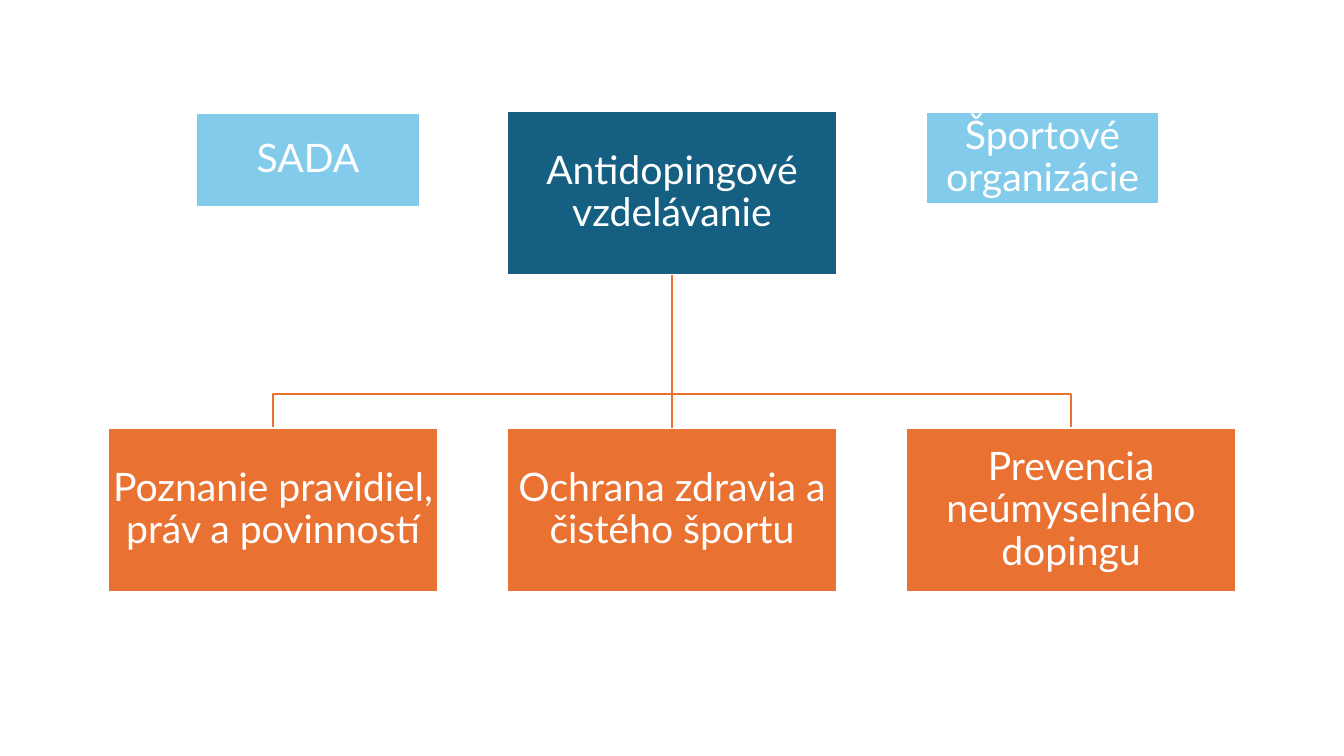
from dataclasses import dataclass

from lxml.etree import SubElement
from pptx import Presentation
from pptx.dml.color import RGBColor
from pptx.enum.shapes import MSO_CONNECTOR, MSO_SHAPE
from pptx.enum.text import MSO_ANCHOR, PP_ALIGN
from pptx.oxml.ns import qn
from pptx.shapes.autoshape import Shape
from pptx.shapes.shapetree import SlideShapes
from pptx.util import Emu, Pt


@dataclass(frozen=True)
class Theme:
    white: RGBColor = RGBColor(0xFF, 0xFF, 0xFF)
    partner: RGBColor = RGBColor(0x83, 0xCB, 0xEB)
    topic: RGBColor = RGBColor(0x15, 0x60, 0x82)
    branch: RGBColor = RGBColor(0xE9, 0x71, 0x32)
    font: str = "Lato"
    text_size: Pt = Pt(28)
    line_width: Pt = Pt(1.5)
    line_spacing: float = 0.9


@dataclass(frozen=True)
class Box:
    text: str
    left: int
    top: int
    width: int
    height: int
    fill: RGBColor

    @property
    def center(self) -> int:
        return self.left + self.width // 2

    @property
    def bottom(self) -> int:
        return self.top + self.height


THEME = Theme()
SLIDE_WIDTH, SLIDE_HEIGHT = 1344, 756
BOX_WIDTH, BOX_HEIGHT = 330, 164
COLUMN_STEP = 399
BRANCH_TOP = 428
BUS_Y = 394
TEXT_INSET = 2

TOPIC = Box("Antidopingové vzdelávanie", (SLIDE_WIDTH - BOX_WIDTH) // 2, 111,
            BOX_WIDTH, BOX_HEIGHT, THEME.topic)
PARTNERS = [
    Box("SADA", 196, 113, 224, 94, THEME.partner),
    Box("Športové organizácie", 926, 112, 233, 92, THEME.partner),
]
BRANCHES = [
    Box(text, TOPIC.left + column * COLUMN_STEP, BRANCH_TOP,
        BOX_WIDTH, BOX_HEIGHT, THEME.branch)
    for column, text in zip((-1, 0, 1), (
        "Poznanie pravidiel, práv a povinností",
        "Ochrana zdravia a čistého športu",
        "Prevencia neúmyselného dopingu",
    ))
]


def px(length: int) -> Emu:
    """Turn slide pixels into EMU, at 100.8 pixels to the inch."""
    return Emu(round(length * 914400 / 100.8))


def add_box(shapes: SlideShapes, box: Box) -> Shape:
    shape = shapes.add_shape(MSO_SHAPE.RECTANGLE, px(box.left), px(box.top),
                             px(box.width), px(box.height))
    shape.shadow.inherit = False
    shape.fill.solid()
    shape.fill.fore_color.rgb = box.fill
    shape.line.color.rgb = THEME.white
    shape.line.width = THEME.line_width

    frame = shape.text_frame
    frame.word_wrap = True
    frame.vertical_anchor = MSO_ANCHOR.MIDDLE
    frame.margin_left = frame.margin_right = px(TEXT_INSET)
    frame.margin_top = frame.margin_bottom = px(TEXT_INSET)
    paragraph = frame.paragraphs[0]
    paragraph.alignment = PP_ALIGN.CENTER
    paragraph.line_spacing = THEME.line_spacing
    run = paragraph.add_run()
    run.text = box.text
    run.font.name = THEME.font
    run.font.size = THEME.text_size
    run.font.color.rgb = THEME.white
    return shape


def add_bent_line(shapes: SlideShapes, parent: Box, child: Box) -> None:
    """Lead from the parent down to the bus, along it, and down to the child."""
    builder = shapes.build_freeform(px(parent.center), px(parent.bottom))
    corners = [(parent.center, BUS_Y), (child.center, BUS_Y), (child.center, child.top)]
    builder.add_line_segments([(px(x), px(y)) for x, y in corners], close=False)
    line = builder.convert_to_shape()
    line.shadow.inherit = False
    line.fill.background()
    line.line.color.rgb = THEME.branch
    line.line.width = THEME.line_width


def add_straight_line(shapes: SlideShapes, parent: Shape, child: Shape) -> None:
    connector = shapes.add_connector(MSO_CONNECTOR.STRAIGHT, 0, 0, 0, 0)
    connector.begin_connect(parent, 2)
    connector.end_connect(child, 0)
    connector.line.color.rgb = THEME.branch
    connector.line.width = THEME.line_width
    SubElement(connector.element.spPr, qn("a:effectLst"))


def main() -> None:
    presentation = Presentation()
    presentation.slide_width = px(SLIDE_WIDTH)
    presentation.slide_height = px(SLIDE_HEIGHT)
    shapes = presentation.slides.add_slide(presentation.slide_layouts[6]).shapes

    left_branch, middle_branch, right_branch = BRANCHES
    for branch in (right_branch, left_branch):
        add_bent_line(shapes, TOPIC, branch)
    drawn = {box: add_box(shapes, box) for box in [TOPIC, *BRANCHES, *PARTNERS]}
    add_straight_line(shapes, drawn[TOPIC], drawn[middle_branch])

    presentation.save("out.pptx")


if __name__ == "__main__":
    main()
